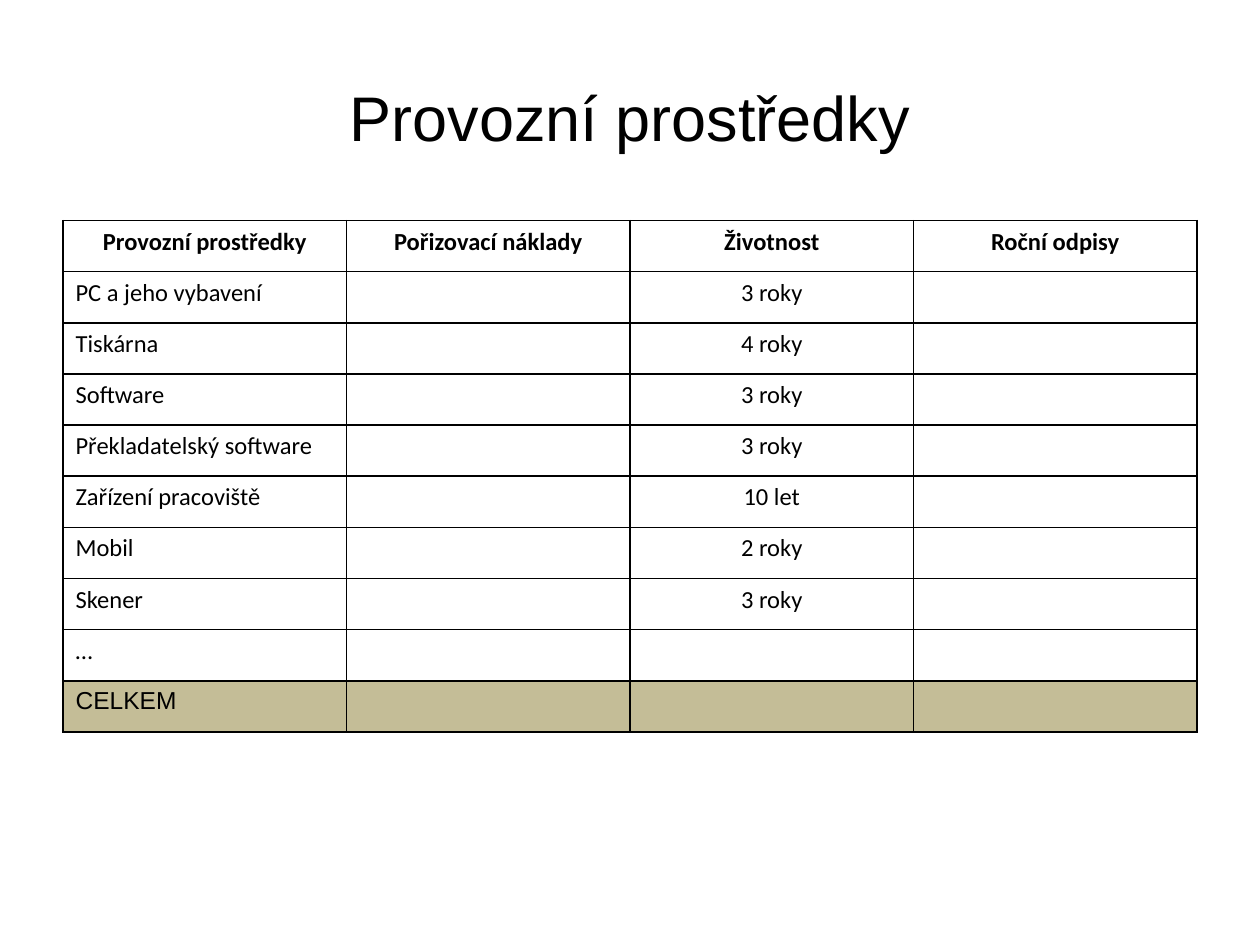
"""Builds a slide with a table of operating equipment and its service life."""
from lxml import etree
from pptx import Presentation
from pptx.dml.color import RGBColor
from pptx.enum.text import MSO_ANCHOR, PP_ALIGN
from pptx.oxml.ns import qn
from pptx.util import Inches, Pt

MIDDLE = MSO_ANCHOR.MIDDLE
LEFT, CENTER = PP_ALIGN.LEFT, PP_ALIGN.CENTER

TITLE = "Provozní prostředky"
HEAD = ["Provozní prostředky", "Pořizovací náklady", "Životnost", "Roční odpisy"]
ITEMS = [
    ("PC a jeho vybavení", "3 roky"),
    ("Tiskárna", "4 roky"),
    ("Software", "3 roky"),
    ("Překladatelský software", "3 roky"),
    ("Zařízení pracoviště", "10 let"),
    ("Mobil", "2 roky"),
    ("Skener", "3 roky"),
    ("…", ""),
]
TOTAL = ["CELKEM", "", "", ""]
ROWS = [HEAD] + [[name, "", life, ""] for name, life in ITEMS] + [TOTAL]

WIDE, HIGH = Inches(10), Inches(7.5)
EDGE = WIDE // 20
SPAN = WIDE - 2 * EDGE
TOP = Inches(1.75)
DEEP = Inches(4.06)
BLACK, TAN = "000000", "C4BD97"
BIG = {"name": "Arial", "size": Pt(36), "bold": False}
PLAIN = {"name": "Calibri", "size": Pt(14), "bold": False}
BOLD = {**PLAIN, "bold": True}
SUM = {**PLAIN, "name": "Arial"}


def color(code):
    return RGBColor.from_string(code)


def write(frame, text, style, align):
    para = frame.paragraphs[0]
    para.alignment = align
    run = para.add_run()
    run.text = text
    for key, value in style.items():
        setattr(run.font, key, value)
    run.font.color.rgb = color(BLACK)


def border(cell):
    props = cell._tc.get_or_add_tcPr()
    for side in ("lnL", "lnR", "lnT", "lnB"):
        line = etree.SubElement(props, qn("a:" + side), w=str(Pt(1)))
        fill = etree.SubElement(line, qn("a:solidFill"))
        etree.SubElement(fill, qn("a:srgbClr"), val=BLACK)


def add_title(slide):
    title = slide.shapes.title
    place = {"left": EDGE, "top": Inches(0.3), "width": SPAN, "height": Inches(1.25)}
    for key, value in place.items():
        setattr(title, key, value)
    title.text_frame.vertical_anchor = MIDDLE
    write(title.text_frame, TITLE, BIG, CENTER)


def add_grid(slide):
    last = len(ROWS) - 1
    table = slide.shapes.add_table(
        len(ROWS), len(HEAD), EDGE, TOP, SPAN, DEEP).table
    table.first_row = table.horz_banding = False
    styles = {0: BOLD, last: SUM}
    for i, row in enumerate(ROWS):
        for j, text in enumerate(row):
            cell = table.cell(i, j)
            border(cell)
            if i == last:
                cell.fill.solid()
                cell.fill.fore_color.rgb = color(TAN)
            else:
                cell.fill.background()
            align = LEFT if i and j == 0 else CENTER
            write(cell.text_frame, text, styles.get(i, PLAIN), align)


def main():
    deck = Presentation()
    deck.slide_width, deck.slide_height = WIDE, HIGH
    slide = deck.slides.add_slide(deck.slide_layouts[5])
    add_title(slide)
    add_grid(slide)
    deck.save("out.pptx")


if __name__ == "__main__":
    main()
